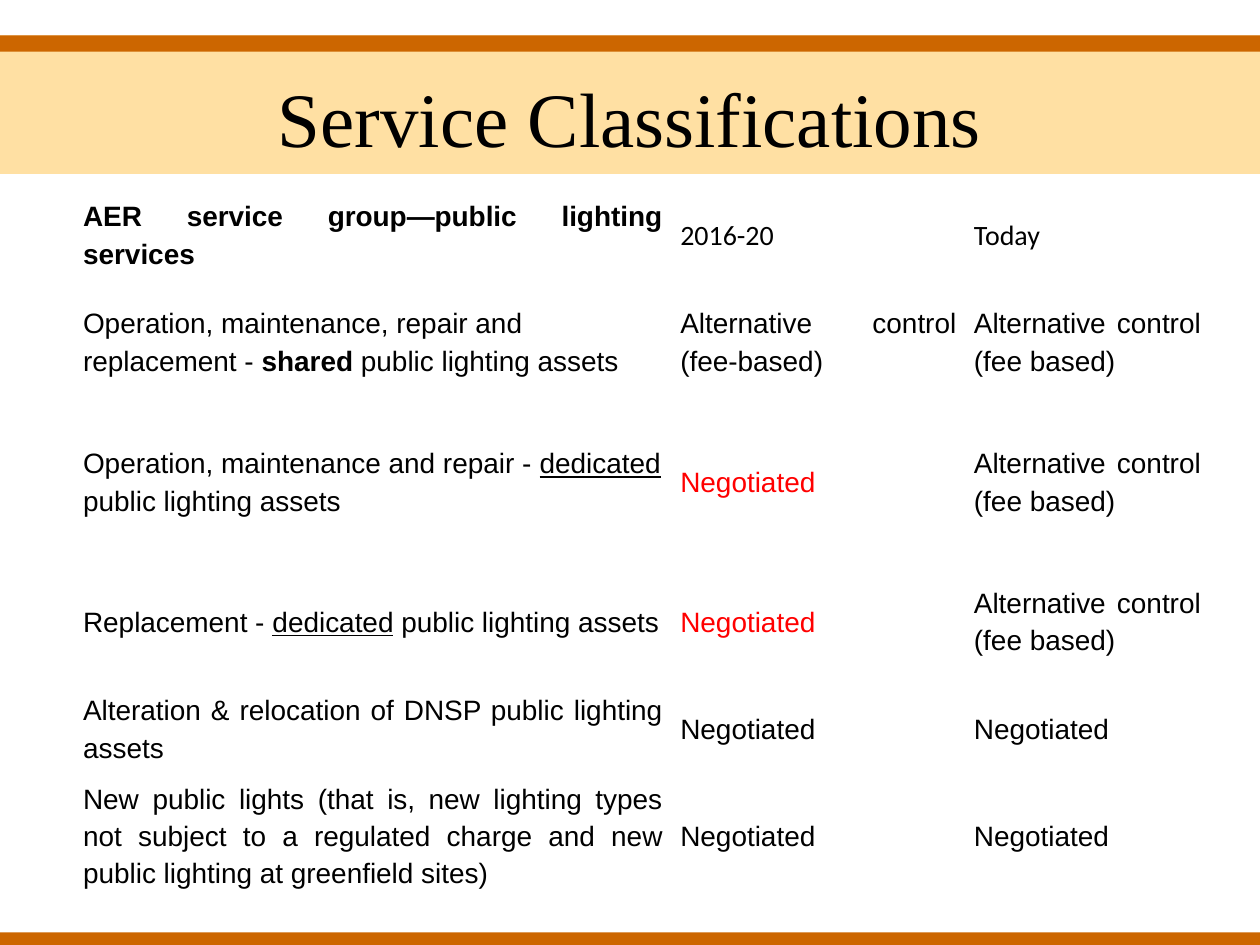
"""Build the service classifications slide with its public lighting table."""
from dataclasses import dataclass

from lxml.etree import SubElement
from pptx import Presentation
from pptx.dml.color import RGBColor
from pptx.enum.shapes import MSO_SHAPE
from pptx.enum.text import MSO_ANCHOR, PP_ALIGN
from pptx.oxml.ns import qn
from pptx.slide import Slide
from pptx.util import Pt

COLORS = {"bar": "CC6600", "band": "FFCC66", "text": "000000", "changed": "FF0000"}
JUSTIFIED = {"alignment": PP_ALIGN.JUSTIFY, "space_before": Pt(6), "space_after": Pt(12)}
RAGGED = {"alignment": PP_ALIGN.LEFT, "space_before": Pt(4), "space_after": Pt(6)}
COLUMN_WIDTHS = [341.3, 167.8, 139.7]
ROW_HEIGHTS = [39.6, 79.9, 79.9, 79.9, 39.6, 79.9]

BOLD = {"bold": True}
UNDERLINED = {"underline": True}
CALIBRI = {"name": "Calibri"}
CHANGED = {"color": "changed"}
DEDICATED = ("dedicated", UNDERLINED)
ASSETS = " public lighting assets"
FEE_BASED = "Alternative control (fee based)"
NEGOTIATED = "Negotiated"
NOW_NEGOTIATED = [(NEGOTIATED, CHANGED)]

ROWS = [
    ([("AER service group—public lighting services", BOLD)],
     [("2016-20", CALIBRI)], [("Today", CALIBRI)]),
    (["Operation, maintenance, repair and replacement - ", ("shared", BOLD), ASSETS],
     ["Alternative control (fee-based)"], [FEE_BASED]),
    (["Operation, maintenance and repair - ", DEDICATED, ASSETS],
     NOW_NEGOTIATED, [FEE_BASED]),
    (["Replacement - ", DEDICATED, ASSETS], NOW_NEGOTIATED, [FEE_BASED]),
    (["Alteration & relocation of DNSP public lighting assets"],
     [NEGOTIATED], [NEGOTIATED]),
    (["New public lights (that is, new lighting types not subject to a regulated "
      "charge and new public lighting at greenfield sites)"],
     [NEGOTIATED], [NEGOTIATED]),
]


def apply(target, values):
    """Set each named attribute on the target."""
    for name, value in values.items():
        setattr(target, name, value)


@dataclass
class Deck:
    """Hold the text style and the current slide."""

    slide: Slide
    body_font: str = "Arial"
    body_size: int = 16
    title_font: str = "Times New Roman"
    title_size: int = 44

    def band(self, top, height, color, opacity=100):
        """Add a full-width band."""
        band = self.slide.shapes.add_shape(
            MSO_SHAPE.RECTANGLE, Pt(0), Pt(top), Pt(720), Pt(height))
        band.shadow.inherit = False
        band.line.fill.background()
        band.fill.solid()
        band.fill.fore_color.rgb = RGBColor.from_string(COLORS[color])
        if opacity < 100:
            tint = band._element.spPr.find(qn("a:solidFill"))[0]
            SubElement(tint, qn("a:alpha"), val=str(opacity * 1000))

    def title(self, text):
        """Place the title in front of the bands."""
        title = self.slide.shapes.title
        title._element.getparent().append(title._element)
        apply(title, {"left": Pt(36), "top": Pt(21.6), "width": Pt(648), "height": Pt(90)})
        title.text_frame.vertical_anchor = MSO_ANCHOR.MIDDLE
        paragraph = title.text_frame.paragraphs[0]
        paragraph.alignment = PP_ALIGN.CENTER
        self.run(paragraph, text, name=self.title_font, size=Pt(self.title_size))

    def run(self, paragraph, text, color="text", **font):
        """Add one formatted run."""
        run = paragraph.add_run()
        run.text = text
        apply(run.font, {"name": self.body_font, "size": Pt(self.body_size), **font})
        run.font.color.rgb = RGBColor.from_string(COLORS[color])

    def cell(self, cell, pieces):
        """Fill one table cell; cells of mixed runs are set ragged."""
        apply(cell, {"margin_left": Pt(5), "margin_right": Pt(5), "margin_top": 0,
                     "margin_bottom": 0, "vertical_anchor": MSO_ANCHOR.MIDDLE})
        cell.fill.background()
        paragraph = cell.text_frame.paragraphs[0]
        apply(paragraph, RAGGED if len(pieces) > 1 else JUSTIFIED)
        paragraph.line_spacing = 1.2
        for piece in pieces:
            text, font = (piece, {}) if isinstance(piece, str) else piece
            self.run(paragraph, text, **font)

    def table(self, left, top, widths, heights, rows):
        """Add a plain table."""
        table = self.slide.shapes.add_table(
            len(heights), len(widths), Pt(left), Pt(top),
            Pt(sum(widths)), Pt(sum(heights))).table
        apply(table, {"first_row": False, "horz_banding": False})
        for column, width in zip(table.columns, widths):
            column.width = Pt(width)
        for row, height, contents in zip(table.rows, heights, rows):
            row.height = Pt(height)
            for cell, pieces in zip(row.cells, contents):
                self.cell(cell, pieces)


def main():
    """Build and save the slide."""
    presentation = Presentation()
    apply(presentation, {"slide_width": Pt(720), "slide_height": Pt(540)})
    deck = Deck(presentation.slides.add_slide(presentation.slide_layouts[5]))
    deck.band(532.8, 9.4, "bar")
    deck.band(20.2, 79.2, "band", opacity=60)
    deck.band(20.2, 9.4, "bar")
    deck.title("Service Classifications")
    deck.table(42.5, 111.6, COLUMN_WIDTHS, ROW_HEIGHTS, ROWS)
    presentation.save("out.pptx")


if __name__ == "__main__":
    main()
